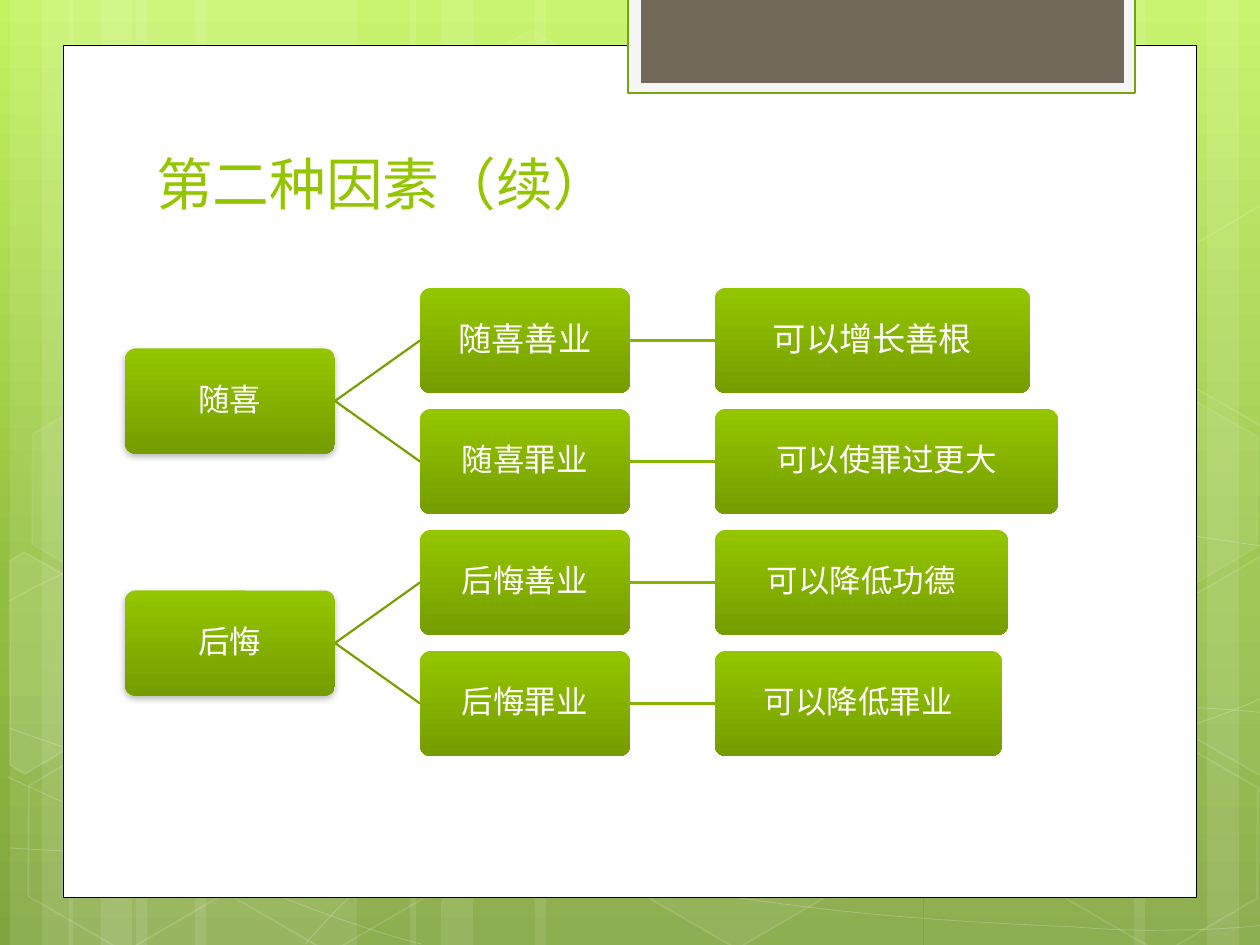
import math
from copy import deepcopy
from dataclasses import dataclass

from lxml import etree
from pptx import Presentation
from pptx import util as u
from pptx.dml.color import RGBColor
from pptx.enum import shapes, text
from pptx.oxml.ns import qn

PX = u.Inches(1) / 126
WIDTH, HEIGHT = 1260, 945
TILT = 30


@dataclass(frozen=True)
class Theme:
    font: str = "League Spartan"
    title_size: float = 32.4
    large_size: float = 19
    box_size: float = 18
    white: str = "FFFFFF"
    black: str = "000000"
    green: str = "94C600"
    box_end: str = "769D00"
    branch: str = "779F00"
    link: str = "86B400"
    tab: str = "F5F5F5"
    tab_line: str = "74A510"
    tab_inner: str = "71685A"
    background: tuple = ((0, "C3F35F"), (0.62, "93BF3F"), (1, "81A53E"))


THEME = Theme()

# left, width
STRIPES = [(136, 221), (10, 63), (42, 105), (195, 221), (69, 63), (101, 105),
           (924, 221), (1207, 63), (1134, 105), (535, 388), (410, 63), (441, 105)]
# left, top, fill opacity, line opacity
HEXAGONS = [(421, 45, 4, 8), (626, 742, 6, 12), (14, 745, 0, 12), (18, 393, 7, 8),
            (219, 746, 0, 12), (949, 571, 10, 12), (1051, 747, 0, 12), (1051, 396, 7, 8)]
# fill opacity, corners as they appear after the tilt
CUT_HEXAGONS = [
    (10, [(10, 561), (24, 552), (121, 607), (120, 718), (25, 774), (10, 765)]),
    (4, [(1167, 611), (1261, 556), (1271, 562), (1271, 772), (1263, 777), (1167, 722)]),
    (0, [(1167, 261), (1261, 205), (1273, 212), (1271, 422), (1263, 427), (1167, 372)]),
]
# start point, then two control points and an end point for each cubic segment
CURVES = [
    [(9, 848), (77, 852), (145, 856), (239, 854), (334, 853), (451, 851), (577, 838),
     (703, 825), (882, 801), (998, 777), (1113, 753), (1231, 716), (1269, 694)],
    [(9, 601), (45, 581), (82, 562), (152, 543), (224, 524), (326, 496), (437, 488),
     (549, 479), (685, 478), (824, 488), (963, 498), (1193, 537), (1269, 547)],
    [(8, 777), (160, 847), (311, 916), (421, 944)],
    [(9, 728), (48, 742), (88, 756), (161, 776), (234, 795), (344, 827), (450, 848),
     (554, 869), (687, 892), (791, 905), (896, 919), (1008, 924), (1075, 927),
     (1140, 932), (1158, 930), (1191, 930), (1223, 929), (1246, 927), (1269, 925)],
    [(305, 944), (328, 919), (350, 893), (381, 871), (411, 848), (454, 823), (489, 805),
     (524, 788), (546, 780), (592, 767), (638, 754), (722, 737), (766, 728),
     (811, 719), (818, 719), (857, 717), (896, 713), (958, 709), (1000, 708),
     (1045, 707), (1116, 708), (1116, 708), (1116, 708), (1201, 708), (1201, 708),
     (1223, 709), (1245, 711), (1256, 712), (1264, 713), (1260, 712), (1268, 713)],
]
# root, then (branch, leaf, leaf width, type size)
TREE = [
    ("随喜", [("随喜善业", "可以增长善根", 315, THEME.large_size),
             ("随喜罪业", "可以使罪过更大", 343, THEME.box_size)]),
    ("后悔", [("后悔善业", "可以降低功德", 293, THEME.box_size),
             ("后悔罪业", "可以降低罪业", 287, THEME.box_size)]),
]


def emu(*lengths):
    return [round(length * PX) for length in lengths]


def set_solid(fill, color, opacity=100):
    """Fill with a colour; opacity is a percentage and 0 leaves no fill."""
    if not opacity:
        fill.background()
        return
    fill.solid()
    fill.fore_color.rgb = RGBColor.from_string(color)
    if opacity < 100:
        color_element = fill.fore_color._xFill.find(qn("a:srgbClr"))
        etree.SubElement(color_element, qn("a:alpha"), val=str(opacity * 1000))


def set_gradient(fill, stops):
    for stop, (position, color) in zip(fill.gradient_stops, stops):
        stop.position = position
        stop.color.rgb = RGBColor.from_string(color)
    fill.gradient_angle = 270


def style(shape, fill=None, fill_opacity=100, line=None, line_width=1, line_opacity=100):
    shape.shadow.inherit = False
    set_solid(shape.fill, fill, fill_opacity if fill else 0)
    set_solid(shape.line.fill, line, line_opacity if line else 0)
    if line:
        shape.line.width = u.Pt(line_width)
    return shape


def add_shape(slide, kind, left, top, width, height, **format):
    return style(slide.shapes.add_shape(kind, *emu(left, top, width, height)), **format)


def add_outline(slide, points, closed, **format):
    start, *rest = [emu(*point) for point in points]
    builder = slide.shapes.build_freeform(*start)
    builder.add_line_segments(rest, close=closed)
    return style(builder.convert_to_shape(), **format)


def add_curve(slide, points, **format):
    """Join each three line segments of an outline into one cubic segment."""
    curve = add_outline(slide, points, False, **format)
    segments = curve.element.xpath(".//a:lnTo")
    for first in range(0, len(segments), 3):
        cubic = etree.Element(qn("a:cubicBezTo"))
        segments[first].addprevious(cubic)
        for segment in segments[first:first + 3]:
            cubic.append(segment[0])
            segment.getparent().remove(segment)


def rotate(point, degrees):
    x, y = point
    cosine, sine = math.cos(math.radians(degrees)), math.sin(math.radians(degrees))
    return x * cosine - y * sine, x * sine + y * cosine


def untilt(points):
    """Turn points back so that a tilt about their own centre restores them."""
    turned = [rotate(point, -TILT) for point in points]
    center = [(min(axis) + max(axis)) / 2 for axis in zip(*turned)]
    shift = [new - old for new, old in zip(rotate(center, TILT), center)]
    return [(x + shift[0], y + shift[1]) for x, y in turned]


def add_line(slide, start, end, color):
    line = slide.shapes.add_connector(shapes.MSO_CONNECTOR.STRAIGHT, *emu(*start, *end))
    line.line.color.rgb = RGBColor.from_string(color)
    line.line.width = u.Pt(1.25)
    etree.SubElement(line.element.spPr, qn("a:effectLst"))


def write(shape, words, size, color, align, anchor, margin, spacing=1.0):
    frame = shape.text_frame
    frame.word_wrap = True
    frame.auto_size = text.MSO_AUTO_SIZE.NONE
    frame.vertical_anchor = anchor
    frame.margin_left = frame.margin_right = emu(margin)[0]
    frame.margin_top = frame.margin_bottom = emu(margin / 2)[0]
    paragraph = frame.paragraphs[0]
    paragraph.alignment = align
    paragraph.line_spacing = spacing
    run = paragraph.add_run()
    run.text = words
    run.font.name = THEME.font
    run.font.size = u.Pt(size)
    run.font.color.rgb = RGBColor.from_string(color)


def add_backdrop(slide):
    fill = slide.background.fill
    fill.gradient()
    last_stop = slide.element.xpath("./p:cSld/p:bg//a:gs")[-1]
    last_stop.addnext(deepcopy(last_stop))
    set_gradient(fill, THEME.background)
    white = THEME.white
    for left, width in STRIPES:
        add_shape(slide, shapes.MSO_SHAPE.RECTANGLE, left, 0, width, HEIGHT,
                  fill=white, fill_opacity=10)
    for points in CURVES:
        add_curve(slide, points, line=white, line_width=0.5, line_opacity=20)
    for left, top, fill_opacity, line_opacity in HEXAGONS:
        hexagon = add_shape(slide, shapes.MSO_SHAPE.HEXAGON, left, top, 221, 192, fill=white,
                            fill_opacity=fill_opacity, line=white, line_opacity=line_opacity)
        hexagon.adjustments[0] = 0.285
        hexagon.rotation = TILT
    for fill_opacity, corners in CUT_HEXAGONS:
        cut = add_outline(slide, untilt(corners), True, fill=white,
                          fill_opacity=fill_opacity, line=white, line_opacity=12)
        cut.rotation = TILT


def add_panel(slide, left, top, width, height):
    rectangle = shapes.MSO_SHAPE.RECTANGLE
    add_shape(slide, rectangle, left, top, width, height,
              fill=THEME.white, line=THEME.black, line_width=0.5)
    add_shape(slide, rectangle, left + 565, top - 48, 507, 96,
              fill=THEME.tab, line=THEME.tab_line, line_width=1.25)
    add_shape(slide, rectangle, left + 578, top - 48, 483, 86, fill=THEME.tab_inner)


def add_title(slide, words, left, top, width, height):
    title = slide.shapes.title
    title.left, title.top, title.width, title.height = emu(left, top, width, height)
    title.element.getparent().append(title.element)
    write(title, words, THEME.title_size, THEME.green, text.PP_ALIGN.LEFT,
          text.MSO_ANCHOR.BOTTOM, margin=13)


def add_box(slide, words, left, top, width, height, size=THEME.box_size, shadow=False):
    box = add_shape(slide, shapes.MSO_SHAPE.ROUNDED_RECTANGLE, left, top, width, height)
    box.adjustments[0] = 0.1
    box.fill.gradient()
    set_gradient(box.fill, ((0, THEME.green), (1, THEME.box_end)))
    if shadow:
        effects = box.element.spPr.find(qn("a:effectLst"))
        outer = etree.SubElement(effects, qn("a:outerShdw"), blurRad=str(u.Pt(4)),
                                 dist=str(u.Pt(2)), dir="5400000", rotWithShape="0")
        color = etree.SubElement(outer, qn("a:srgbClr"), val=THEME.black)
        etree.SubElement(color, qn("a:alpha"), val="28000")
    write(box, words, size, THEME.white, text.PP_ALIGN.CENTER, text.MSO_ANCHOR.MIDDLE,
          margin=5, spacing=0.9)


def add_tree(slide, roots, left, top):
    width, height, column_gap, row_gap = 210, 105, 85, 16
    branch_left, leaf_left = (left + n * (width + column_gap) for n in (1, 2))
    pitch = height + row_gap
    for root, branches in roots:
        root_top = top + pitch * (len(branches) - 1) / 2
        root_end = (left + width, root_top + height / 2)
        add_box(slide, root, left, root_top, width, height, shadow=True)
        for branch, leaf, leaf_width, size in branches:
            middle = top + height / 2
            add_line(slide, root_end, (branch_left, middle), THEME.branch)
            add_box(slide, branch, branch_left, top, width, height, size)
            add_line(slide, (branch_left + width, middle), (leaf_left, middle), THEME.link)
            add_box(slide, leaf, leaf_left, top, leaf_width, height, size)
            top += pitch


presentation = Presentation()
presentation.slide_width, presentation.slide_height = emu(WIDTH, HEIGHT)
main_slide = presentation.slides.add_slide(presentation.slide_layouts[5])
add_backdrop(main_slide)
add_panel(main_slide, 63, 45, 1134, 853)
add_title(main_slide, "第二种因素（续）", 143, 141, 968, 82)
add_tree(main_slide, TREE, 125, 288)
presentation.save("out.pptx")
